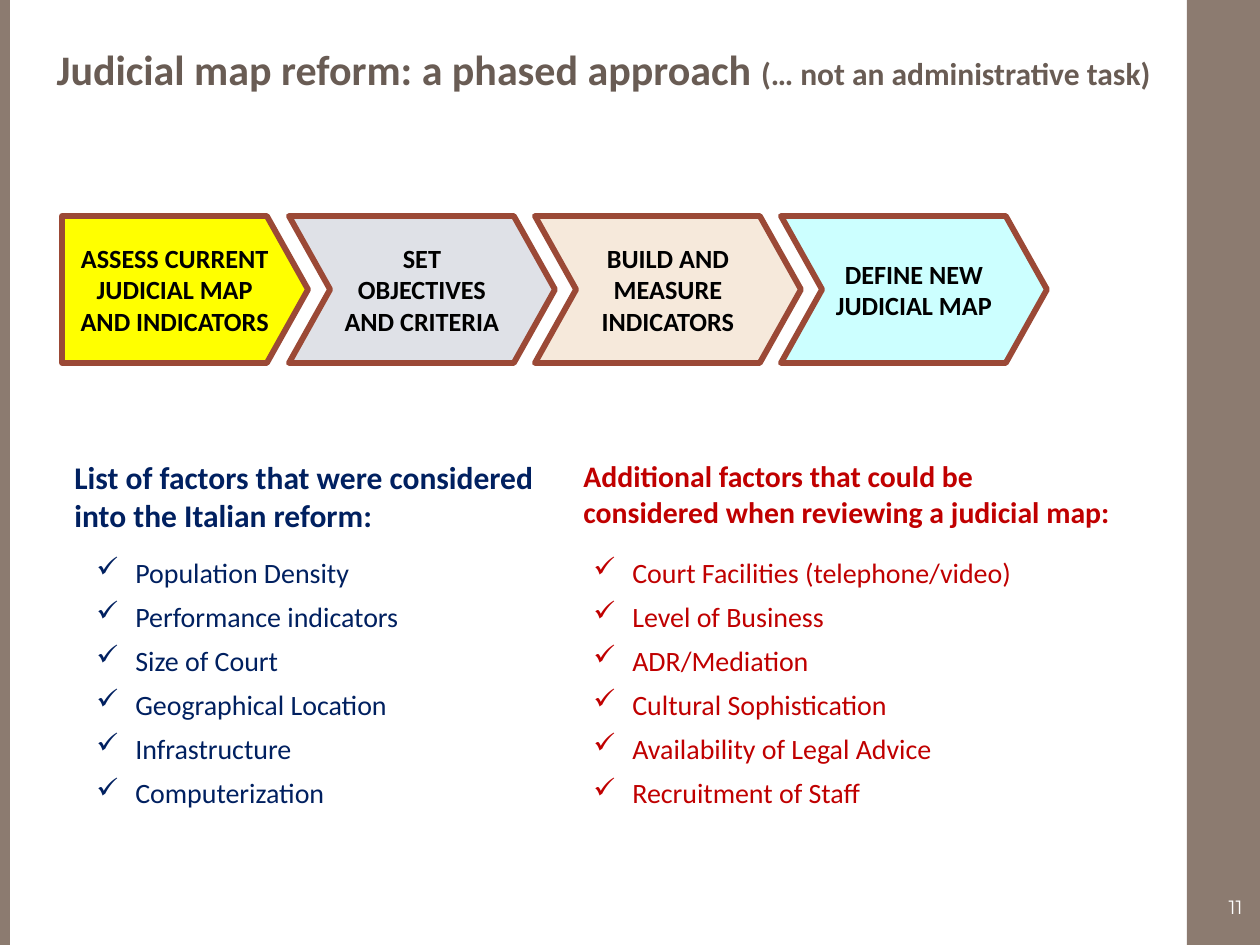
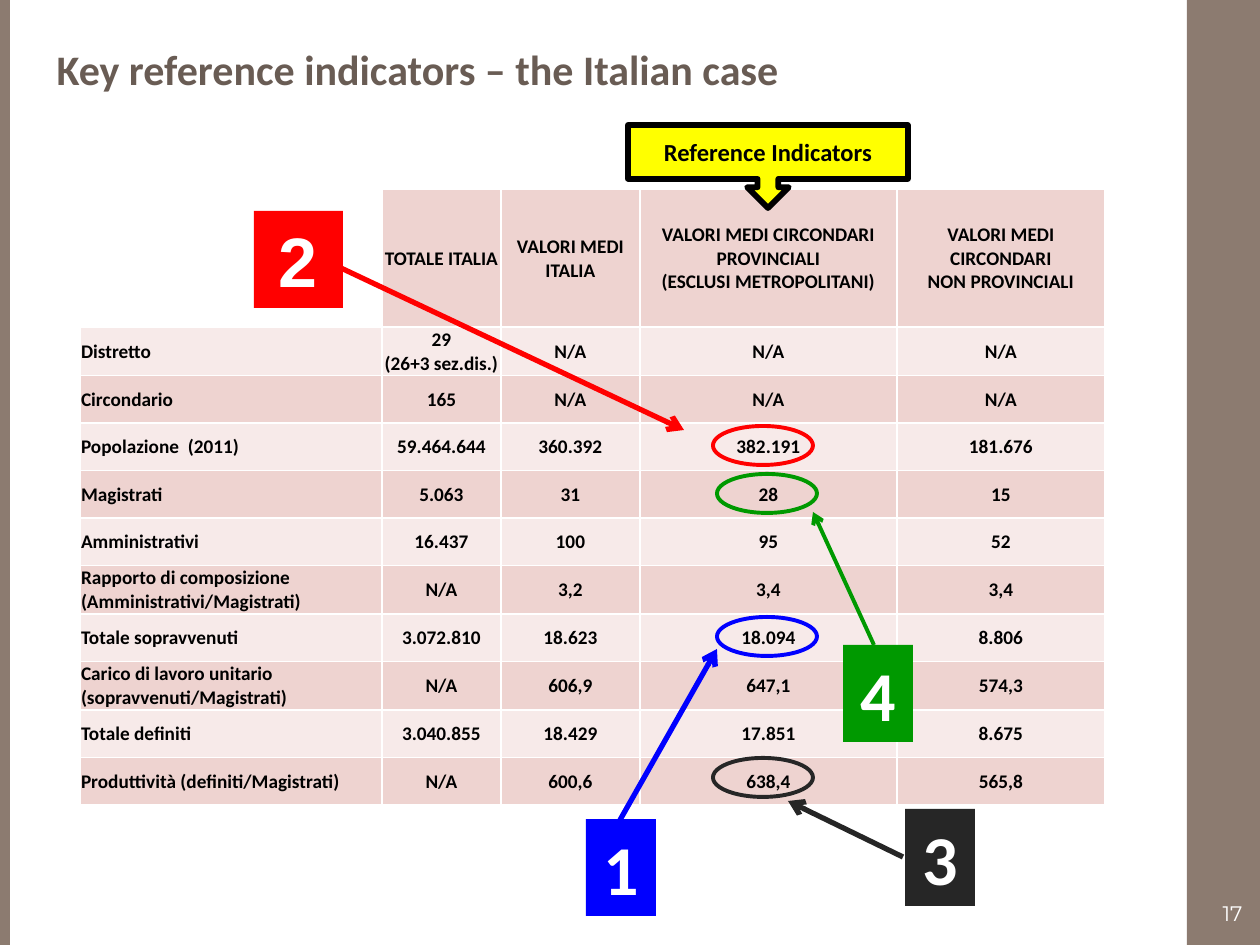
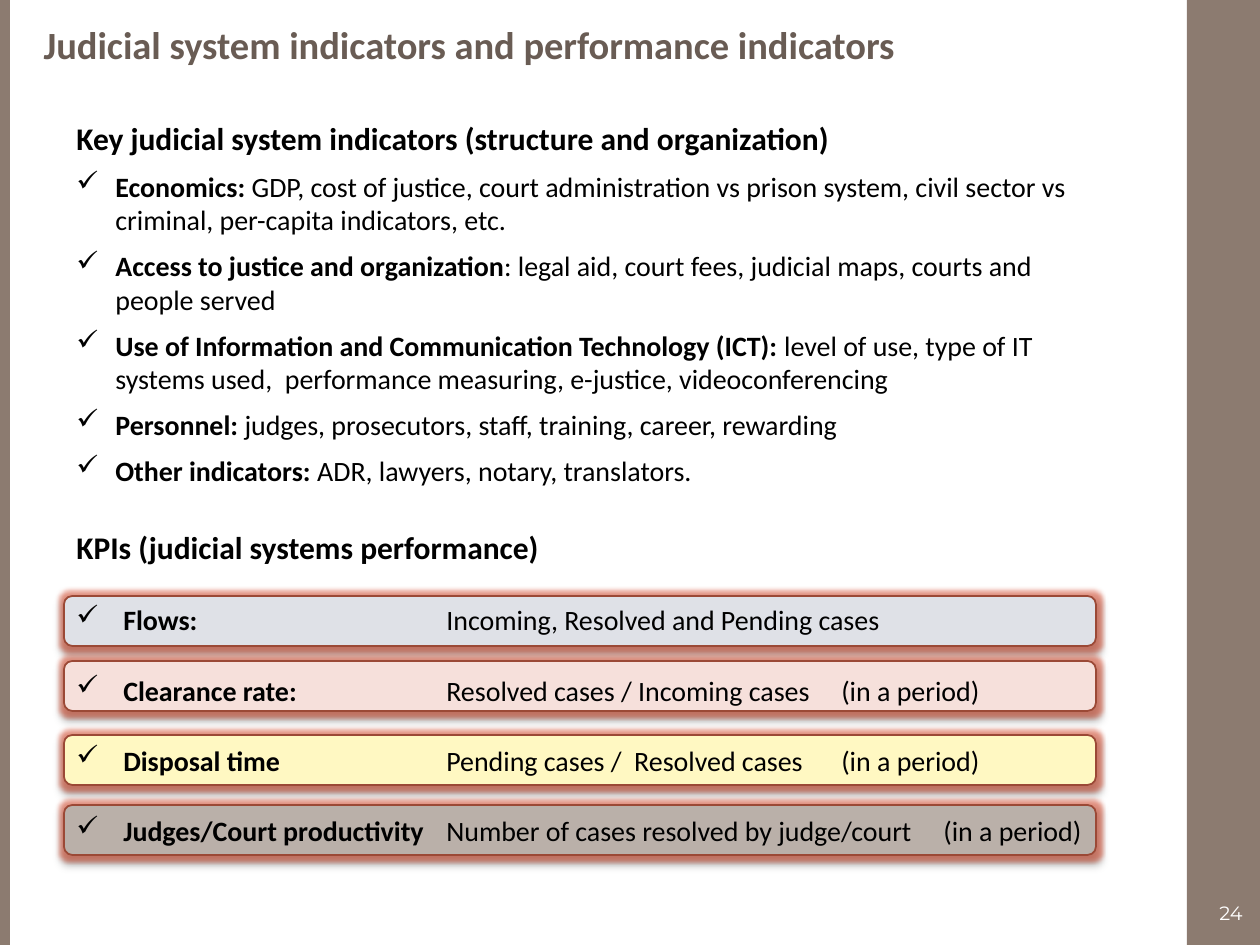
"""Builds three slides on judicial map reform and its indicators."""
import pptx
import pptx.dml.color
import pptx.enum.shapes
import pptx.enum.text
import pptx.oxml.ns
import pptx.util
from lxml import etree

SHAPE = pptx.enum.shapes.MSO_SHAPE
ALIGN = pptx.enum.text.PP_ALIGN
ANCHOR = pptx.enum.text.MSO_ANCHOR
FIT = pptx.enum.text.MSO_AUTO_SIZE
SIDE = 1260, 945

THEME = {
    "color": {
        "band": "8C7B70", "title": "695C54", "edge": "9B4936", "white": "FFFFFF",
        "black": "000000", "navy": "002060", "wine": "C00000", "yellow": "FFFF00",
        "gray": "DFE1E7", "sand": "F6E9DB", "cyan": "CCFFFF", "rose": "F6E0DB",
        "cream": "FFF8C2", "stone": "BAB0A9", "dark": "EED3D0", "pale": "F7EAE9",
        "red": "FF0000", "green": "009900", "blue": "0000FF", "ink": "262626",
        "glow": "D9573C",
    },
    "type": {
        "title": ("Calibri", 24, True, "title"),
        "aside": ("Calibri", 18, True, "title"),
        "small title": ("Calibri", 22, True, "title"),
        "step": ("Calibri", 15, True, "black"),
        "navy head": ("Calibri", 18, True, "navy"),
        "wine head": ("Calibri", 17, True, "wine"),
        "navy item": ("Calibri", 16, False, "navy"),
        "wine item": ("Calibri", 16, False, "wine"),
        "head": ("Calibri", 18, True, "black"),
        "lead": ("Calibri", 16, True, "black"),
        "item": ("Calibri", 16, False, "black"),
        "cell": ("Calibri", 11, True, "black"),
        "call": ("Calibri", 14, True, "black"),
        "digit": ("Calibri", 40, True, "white"),
        "arial digit": ("Arial", 40, True, "white"),
        "page": ("Montserrat", 11, False, "white"),
        "big page": ("Montserrat", 12, False, "white"),
    },
}

BANDS = [(1187, 0, 73, 945), (0, 0, 10, 945)]

STEPS = [
    ("ASSESS CURRENT JUDICIAL MAP AND INDICATORS", "yellow"),
    ("SET OBJECTIVES AND CRITERIA", "gray"),
    ("BUILD AND MEASURE INDICATORS", "sand"),
    ("DEFINE NEW JUDICIAL MAP", "cyan"),
]

FACTORS = [
    ("navy", (62, 452, 508, 90), (84, 549, 373, 270),
     "List of factors that were considered into the Italian reform:",
     ["Population Density", "Performance indicators", "Size of Court",
      "Geographical Location", "Infrastructure", "Computerization"]),
    ("wine", (571, 452, 556, 84), (581, 549, 449, 270),
     "Additional factors that could be\vconsidered when reviewing a judicial map:",
     ["Court Facilities (telephone/video)", "Level of Business", "ADR/Mediation",
      "Cultural Sophistication", "Availability of Legal Advice", "Recruitment of Staff"]),
]

COLS = [302, 119, 139, 257, 208]
ROWS = [
    ("", "TOTALE ITALIA", "VALORI MEDI ITALIA",
     "VALORI MEDI CIRCONDARI PROVINCIALI\n(ESCLUSI METROPOLITANI)",
     "VALORI MEDI CIRCONDARI\nNON PROVINCIALI"),
    ("Distretto", "29\n(26+3 sez.dis.)", "N/A", "N/A", "N/A"),
    ("Circondario", "165", "N/A", "N/A", "N/A"),
    ("Popolazione  (2011)", "59.464.644", "360.392", "382.191", "181.676"),
    ("Magistrati", "5.063", "31", "28", "15"),
    ("Amministrativi", "16.437", "100", "95", "52"),
    ("Rapporto di composizione (Amministrativi/Magistrati)", "N/A", "3,2", "3,4", "3,4"),
    ("Totale sopravvenuti", "3.072.810", "18.623", "18.094", "8.806"),
    ("Carico di lavoro unitario (sopravvenuti/Magistrati)", "N/A", "606,9", "647,1", "574,3"),
    ("Totale definiti", "3.040.855", "18.429", "17.851", "8.675"),
    ("Produttività (definiti/Magistrati)", "N/A", "600,6", "638,4", "565,8"),
]

MARKS = [
    ("1", "blue", "digit", (586, 819, 70, 97), (717, 617), (620, 820, 717, 649), 3),
    ("2", "red", "arial digit", (254, 211, 89, 97), (713, 426), (324, 260, 684, 430), 3),
    ("3", "ink", "digit", (905, 809, 70, 97), (713, 758), (903, 857, 788, 801), 3),
    ("4", "green", "digit", (843, 645, 70, 97), (717, 474), (874, 645, 813, 512), 2.25),
]

SYSTEM = [
    [("Key judicial system indicators (structure and organization)", "head")],
    [("Economics: ", "lead"),
     ("GDP, cost of justice, court administration vs prison system, civil sector vs "
      "criminal, per-capita indicators, etc.", "item")],
    [("Access to justice and organization", "lead"),
     (": legal aid, court fees, judicial maps, courts and people served", "item")],
    [("Use of Information and Communication Technology (ICT): ", "lead"),
     ("level of use, type of IT systems used,  performance measuring, e-justice, "
      "videoconferencing", "item")],
    [("Personnel:", "lead"),
     (" judges, prosecutors, staff, training, career, rewarding", "item")],
    [("Other indicators: ", "lead"), ("ADR, lawyers, notary, translators.", "item")],
]

KPIS = [
    [("KPIs (judicial systems performance)", "head")],
    [("Flows: \t", "lead"), ("Incoming, Resolved and Pending cases", "item")],
    [("Clearance rate: \t", "lead"),
     ("Resolved cases / Incoming cases\t(in a period)", "item")],
    [("Disposal time\t", "lead"),
     ("Pending cases /  Resolved cases\t(in a period)", "item")],
    [("Judges/Court productivity\t", "lead"),
     ("Number of cases resolved by judge/court\t(in a period)", "item")],
]
BARS = [(596, "gray"), (661, "rose"), (735, "cream"), (805, "stone")]
STOPS = [370, 765, 867]


def px(num):
    """Turn pixels into EMU."""
    return round(num * 914400 / 126)


def rgb(name):
    """Look up a theme colour."""
    return pptx.dml.color.RGBColor.from_string(THEME["color"][name])


def put(item, vals):
    """Set each named value on an object."""
    for key, val in vals.items():
        setattr(item, key, val)


def node(root, tag, **vals):
    """Add one drawing element with its attributes."""
    kid = etree.SubElement(root, pptx.oxml.ns.qn(tag))
    for key, val in vals.items():
        kid.set(key, str(val))
    return kid


def write(frame, paras, align=ALIGN.LEFT, after=0, hang=0, stops=(), anchor=ANCHOR.TOP):
    """Write paragraphs of styled runs into a text frame."""
    put(frame, {"word_wrap": True, "auto_size": FIT.NONE, "vertical_anchor": anchor})
    for spot, runs in enumerate(paras):
        para = frame.add_paragraph() if spot else frame.paragraphs[0]
        put(para, {"alignment": align, "space_after": pptx.util.Pt(after)})
        if hang and runs[0][1] != "head":
            prop = para._p.get_or_add_pPr()
            prop.set("marL", str(px(hang)))
            prop.set("indent", str(-px(hang)))
            node(prop, "a:buChar", char="✓")
            if stops:
                tabs = node(prop, "a:tabLst")
                for stop in stops:
                    node(tabs, "a:tab", pos=px(stop), algn="l")
        for text, style in runs:
            for turn, part in enumerate(text.split("\v")):
                if turn:
                    para.add_line_break()
                add_run(para, part, style)


def add_run(para, text, style):
    """Add one run in a theme type style."""
    name, size, bold, color = THEME["type"][style]
    run = para.add_run()
    run.text = text
    put(run.font, {"name": name, "size": pptx.util.Pt(size), "bold": bold})
    run.font.color.rgb = rgb(color)


def note(slide, area, paras, **form):
    """Add a text box."""
    box = slide.shapes.add_textbox(*map(px, area))
    write(box.text_frame, paras, **form)


def draw(slide, kind, area, fill=None, line=None, width=1, runs=None,
         anchor=ANCHOR.MIDDLE):
    """Add a preset shape with fill, line and centred text."""
    shape = slide.shapes.add_shape(kind, *map(px, area))
    shape.shadow.inherit = False
    if fill:
        shape.fill.solid()
        shape.fill.fore_color.rgb = rgb(fill)
    else:
        shape.fill.background()
    if line:
        shape.line.color.rgb = rgb(line)
        shape.line.width = pptx.util.Pt(width)
    else:
        shape.line.fill.background()
    if runs:
        write(shape.text_frame, [runs], align=ALIGN.CENTER, anchor=anchor)
    return shape


def arrow(slide, ends, color, width):
    """Add a straight line with an open arrowhead at its end."""
    line = slide.shapes.add_connector(
        pptx.enum.shapes.MSO_CONNECTOR.STRAIGHT, *map(px, ends))
    line.line.color.rgb = rgb(color)
    line.line.width = pptx.util.Pt(width)
    prop = line.element.spPr
    node(prop.find(pptx.oxml.ns.qn("a:ln")), "a:tailEnd", type="arrow")
    node(prop, "a:effectLst")


def shine(shape):
    """Give a shape a warm glow and a soft shadow."""
    list_ = shape.element.spPr.find(pptx.oxml.ns.qn("a:effectLst"))
    glow = node(list_, "a:glow", rad=63500)
    shade = node(list_, "a:outerShdw", blurRad=50800, dist=38100, dir=5400000, rotWithShape=0)
    for part, color, alpha in [(glow, "glow", 60), (shade, "black", 40)]:
        tone = node(part, "a:srgbClr", val=THEME["color"][color])
        node(tone, "a:alpha", val=alpha * 1000)


def start(deck, area, runs, page, spot, style):
    """Add a slide with its title and page number."""
    slide = deck.slides.add_slide(deck.slide_layouts[5])
    title = slide.shapes.title
    put(title, dict(zip(("left", "top", "width", "height"), map(px, area))))
    write(title.text_frame, [runs])
    note(slide, spot, [[(page, style)]], align=ALIGN.RIGHT, anchor=ANCHOR.MIDDLE)
    return slide


def phases(deck):
    """Build the slide of steps and factors."""
    slide = start(deck, (44, 37, 1140, 63),
                  [("Judicial map reform: a phased approach ", "title"),
                   ("(… not an administrative task)", "aside")],
                  "11", (1196, 880, 59, 54), "page")
    for area in BANDS:
        band = draw(slide, SHAPE.RECTANGLE, area, "band")
        deck.slide_layouts[5].shapes.element.append(band.element)
    for spot, (text, fill) in enumerate(STEPS):
        kind, left, wide = SHAPE.CHEVRON, 43 + 246 * spot, 266
        if spot == 0:
            kind, left, wide = SHAPE.PENTAGON, 62, 246
        step = draw(slide, kind, (left, 216, wide, 147), fill, "edge", 3.35, [(text, "step")])
        step.adjustments[0] = 0.28
    for tone, top, area, head, items in FACTORS:
        note(slide, top, [[(head, tone + " head")]])
        note(slide, area, [[(item, tone + " item")] for item in items], after=6, hang=39)


def grid(slide):
    """Add the table of indicators."""
    frame = slide.shapes.add_table(len(ROWS), len(COLS), *map(px, (80, 189, sum(COLS), 613)))
    table = frame.table
    put(table, {"first_row": False, "horz_banding": False})
    for col, wide in zip(table.columns, COLS):
        col.width = px(wide)
    for row, line in enumerate(ROWS):
        table.rows[row].height = px(47.5 if row else 138)
        for col, text in enumerate(line):
            cell = table.cell(row, col)
            put(cell, {"margin_left": px(1), "margin_right": px(1), "margin_top": px(1),
                       "margin_bottom": 0, "vertical_anchor": ANCHOR.MIDDLE})
            prop = cell._tc.get_or_add_tcPr()
            for side in ("a:lnL", "a:lnR", "a:lnT", "a:lnB"):
                edge = node(node(prop, side, w=12700), "a:solidFill")
                node(edge, "a:srgbClr", val=THEME["color"]["white"])
            if not text:
                cell.fill.background()
                continue
            cell.fill.solid()
            cell.fill.fore_color.rgb = rgb("pale" if row % 2 else "dark")
            write(cell.text_frame, [[(part, "cell")] for part in text.split("\n")],
                  align=ALIGN.CENTER if col else ALIGN.LEFT, anchor=ANCHOR.MIDDLE)


def figures(deck):
    """Build the slide of reference indicators."""
    slide = start(deck, (44, 37, 769, 63),
                  [("Key reference indicators – the Italian case", "title")],
                  "17", (1119, 892, 136, 42), "big page")
    grid(slide)
    for text, color, style, area, ring, ends, width in MARKS:
        draw(slide, SHAPE.OVAL, (*ring, 100, 39), line=color, width=2.25)
        arrow(slide, ends, color, width)
        draw(slide, SHAPE.RECTANGLE, area, color, runs=[(text, style)], anchor=ANCHOR.TOP)
    draw(slide, SHAPE.DOWN_ARROW_CALLOUT, (628, 125, 280, 83), "yellow", "black", 3.35,
         [("Reference Indicators", "call")])


def scores(deck):
    """Build the slide of system and performance indicators."""
    slide = start(deck, (31, 15, 925, 59),
                  [("Judicial system indicators and performance indicators", "small title")],
                  "24", (1119, 892, 136, 42), "page")
    note(slide, (64, 113, 1062, 397), SYSTEM, after=7, hang=39)
    for top, fill in BARS:
        shine(draw(slide, SHAPE.ROUNDED_RECTANGLE, (64, top, 1032, 50), fill, "edge"))
    note(slide, (64, 522, 1071, 339), KPIS, after=21, hang=47, stops=STOPS)


def main():
    """Build and save the deck."""
    deck = pptx.Presentation()
    put(deck, dict(zip(("slide_width", "slide_height"), map(px, SIDE))))
    for build in (phases, figures, scores):
        build(deck)
    deck.save("out.pptx")


if __name__ == "__main__":
    main()
